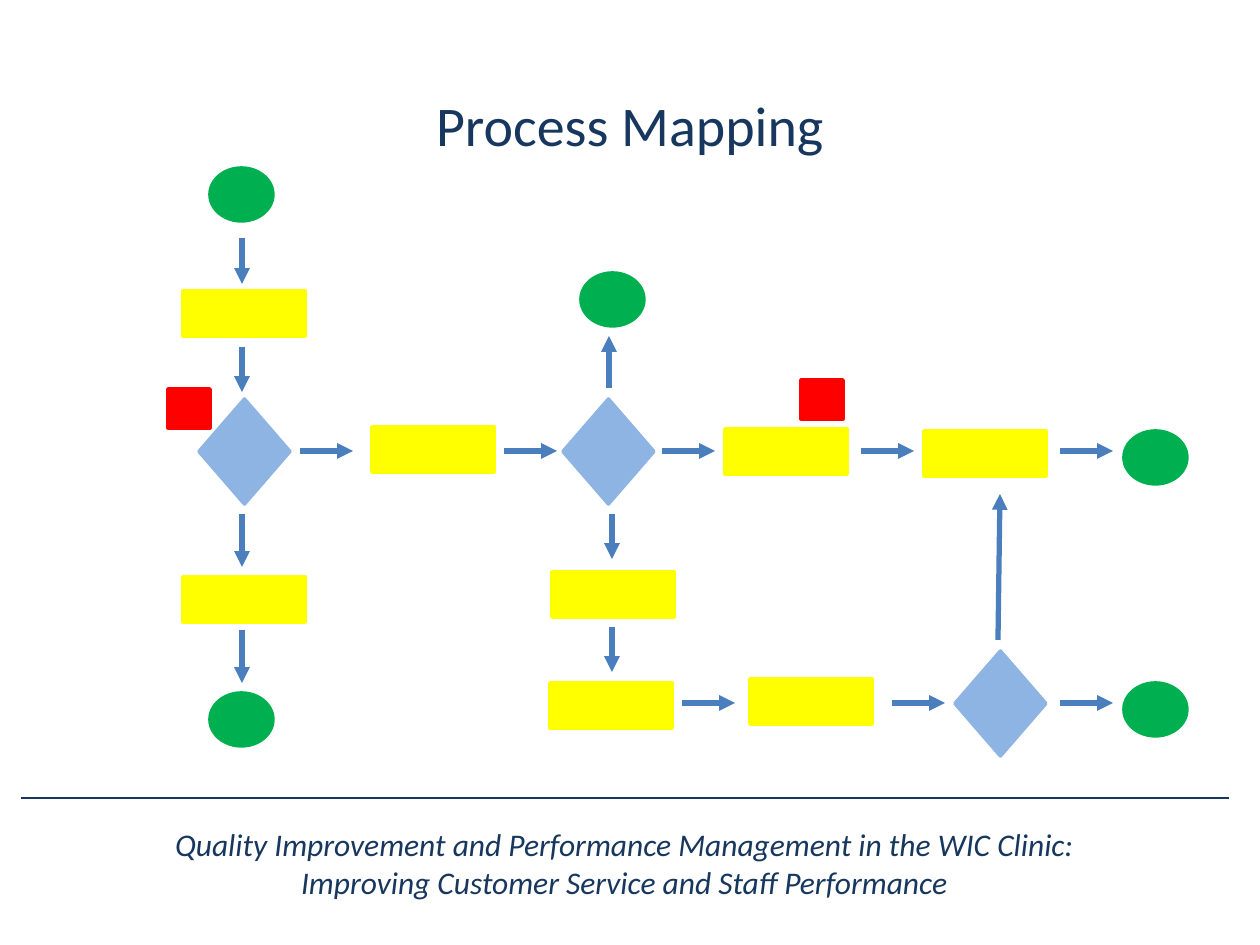
from dataclasses import dataclass

from lxml.etree import SubElement
from pptx import Presentation
from pptx.dml.color import RGBColor
from pptx.enum.shapes import MSO_CONNECTOR, MSO_SHAPE
from pptx.enum.text import MSO_ANCHOR, MSO_AUTO_SIZE, PP_ALIGN
from pptx.oxml.ns import qn
from pptx.util import Emu, Pt

PX = 914400 // 126


@dataclass(frozen=True)
class Theme:
    font: str = "Calibri"
    navy: str = "17375E"
    arrow: str = "4B7EBC"
    step: str = "FFFF00"
    decision: str = "8EB4E3"
    terminal: str = "00B050"
    issue: str = "FF0000"
    title_size: int = 32
    footer_size: int = 18
    outline: float = 2
    arrow_width: float = 3
    rule_width: float = 0.75


THEME = Theme()

TITLE = ["Process Mapping"]
FOOTER = [
    "Quality Improvement and Performance Management in the WIC Clinic:",
    "Improving Customer Service and Staff Performance",
]
TITLE_BOX = (63, 84, 1134, 81)
FOOTER_BOX = (21, 819, 1207, 89)
RULE = (21, 798, 1229, 798)

NODES = [
    (MSO_SHAPE.RECTANGLE, THEME.step, (122, 45), [
        (183, 291), (372, 427), (183, 577), (552, 572),
        (725, 429), (924, 431), (550, 683), (750, 679),
    ]),
    (MSO_SHAPE.DIAMOND, THEME.decision, (91, 105), [(199, 399), (563, 399), (955, 651)]),
    (MSO_SHAPE.OVAL, THEME.terminal, (63, 53), [
        (210, 168), (581, 273), (210, 693), (1124, 431), (1124, 683),
    ]),
    (MSO_SHAPE.RECTANGLE, THEME.issue, (42, 39), [(168, 389), (801, 380)]),
]

ARROW_LENGTH = 53
ROW_ARROWS = {451: [300, 504, 662, 861, 1060], 703: [682, 892, 1060]}
COLUMN_ARROWS = {
    242: [(238, 284), (347, 392), (514, 567), (630, 683)],
    612: [(514, 559), (627, 672)],
    609: [(388, 336)],
}
RETURN_ARROW = (998, 640, 1000, 494)


def scaled(lengths):
    return [Emu(length * PX) for length in lengths]


def color(value):
    return RGBColor.from_string(value)


def add_node(slide, kind, fill, box):
    shape = slide.shapes.add_shape(kind, *scaled(box))
    shape.shadow.inherit = False
    shape.fill.solid()
    shape.fill.fore_color.rgb = color(fill)
    shape.line.color.rgb = color(fill)
    shape.line.width = Pt(THEME.outline)


def add_line(slide, ends, stroke, width, arrowhead=False):
    connector = slide.shapes.add_connector(MSO_CONNECTOR.STRAIGHT, *scaled(ends))
    connector.line.color.rgb = color(stroke)
    connector.line.width = Pt(width)
    if arrowhead:
        SubElement(connector.line._get_or_add_ln(), qn("a:tailEnd"), type="triangle")
    SubElement(connector._element.spPr, qn("a:effectLst"))


def set_text(shape, box, lines, size, italic=False):
    shape.left, shape.top, shape.width, shape.height = scaled(box)
    frame = shape.text_frame
    frame.text = "\n".join(lines)
    frame.word_wrap = True
    frame.auto_size = MSO_AUTO_SIZE.SHAPE_TO_FIT_TEXT
    frame.vertical_anchor = MSO_ANCHOR.TOP
    for paragraph in frame.paragraphs:
        paragraph.alignment = PP_ALIGN.CENTER
        paragraph.font.name = THEME.font
        paragraph.font.size = Pt(size)
        paragraph.font.italic = italic
        paragraph.font.color.rgb = color(THEME.navy)


def main():
    presentation = Presentation()
    presentation.slide_width, presentation.slide_height = scaled((1260, 945))
    slide = presentation.slides.add_slide(presentation.slide_layouts[5])

    add_line(slide, RULE, THEME.navy, THEME.rule_width)
    set_text(slide.shapes.title, TITLE_BOX, TITLE, THEME.title_size)
    footer = slide.shapes.add_textbox(*scaled(FOOTER_BOX))
    set_text(footer, FOOTER_BOX, FOOTER, THEME.footer_size, italic=True)

    for kind, fill, size, corners in NODES:
        for corner in corners:
            add_node(slide, kind, fill, corner + size)

    arrows = [(x, y, x + ARROW_LENGTH, y) for y, starts in ROW_ARROWS.items() for x in starts]
    arrows += [(x, start, x, end) for x, spans in COLUMN_ARROWS.items() for start, end in spans]
    for ends in arrows + [RETURN_ARROW]:
        add_line(slide, ends, THEME.arrow, THEME.arrow_width, arrowhead=True)

    presentation.save("out.pptx")


if __name__ == "__main__":
    main()
